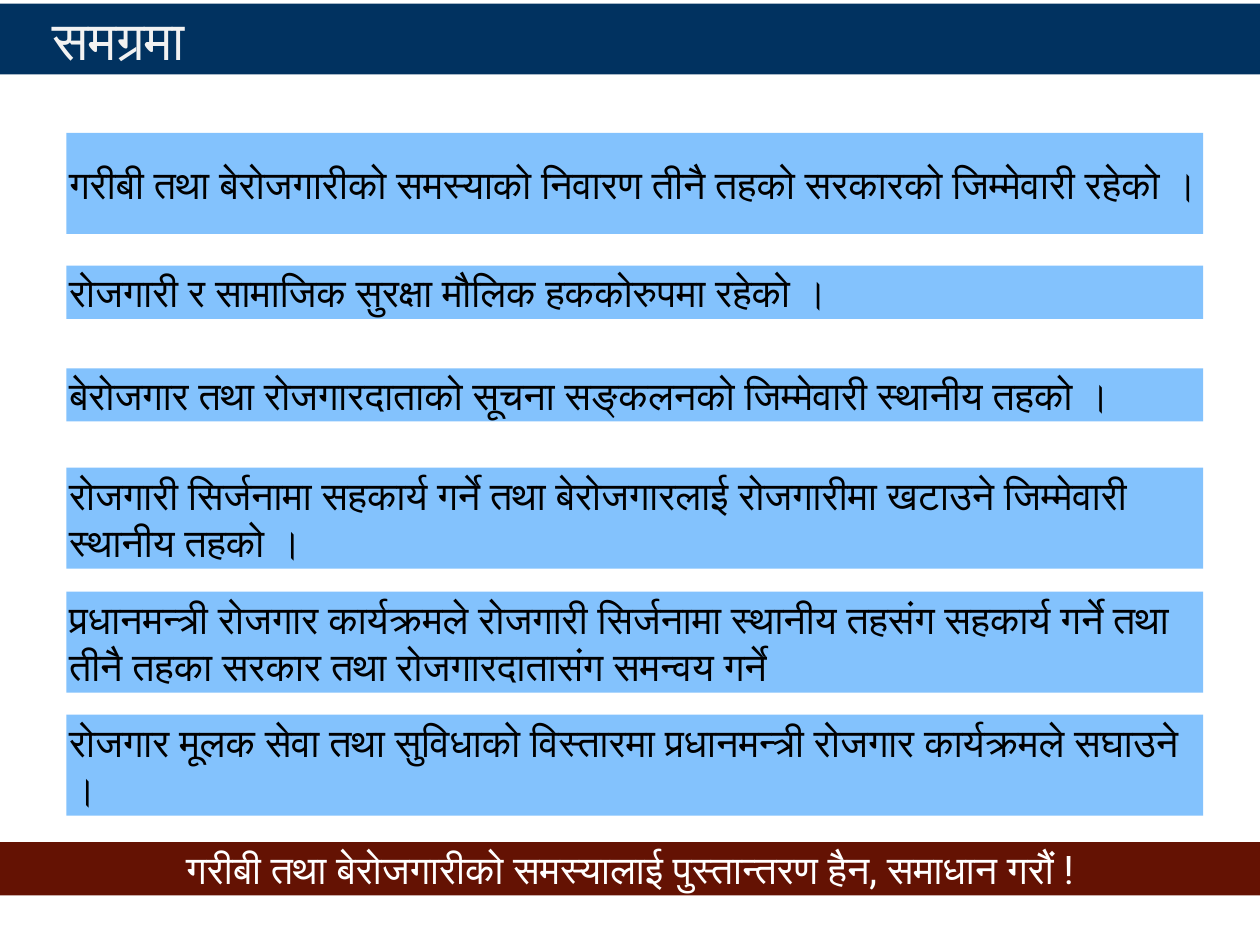
from dataclasses import dataclass

from pptx import Presentation
from pptx.dml.color import RGBColor
from pptx.enum.shapes import MSO_SHAPE as Shape
from pptx.enum.text import MSO_ANCHOR as Anchor, MSO_AUTO_SIZE as AutoSize, PP_ALIGN as Align
from pptx.util import Inches, Pt

# Content: each point has its top edge (inches), height in text lines, and wording
TITLE = "समग्रमा"
POINTS = [
    (1.5, 2, "गरीबी तथा बेरोजगारीको समस्याको निवारण तीनै तहको सरकारको जिम्मेवारी रहेको ।"),
    (3.0, 1, "रोजगारी र सामाजिक सुरक्षा मौलिक हककोरुपमा रहेको ।"),
    (4.16, 1, "बेरोजगार तथा रोजगारदाताको सूचना सङ्कलनको जिम्मेवारी स्थानीय तहको ।"),
    (5.28, 2, "रोजगारी सिर्जनामा सहकार्य गर्ने तथा बेरोजगारलाई रोजगारीमा खटाउने "
              "जिम्मेवारी स्थानीय तहको ।"),
    (6.68, 2, "प्रधानमन्त्री रोजगार कार्यक्रमले रोजगारी सिर्जनामा स्थानीय तहसंग सहकार्य गर्ने "
              "तथा तीनै तहका सरकार तथा रोजगारदातासंग समन्वय गर्ने"),
    (8.07, 2, "रोजगार मूलक सेवा तथा सुविधाको विस्तारमा प्रधानमन्त्री रोजगार कार्यक्रमले सघाउने ।"),
]
SLOGAN = "गरीबी तथा बेरोजगारीको समस्यालाई पुस्तान्तरण हैन, समाधान गरौं !"


@dataclass(frozen=True)
class Theme:
    title_fill: str = "013260"
    title_ink: str = "F2F2F2"
    point_fill: str = "83C2FD"
    point_ink: str = "000000"
    slogan_fill: str = "641203"
    slogan_ink: str = "FFFFFF"
    title_font: str = "Lato"
    body_font: str = "Roboto"
    title_size: int = 44
    body_size: int = 32


THEME = Theme()

# Geometry in inches
SLIDE_W, SLIDE_H = 14.22, 10.67
POINT_LEFT, POINT_W = 0.75, 12.83
INSET, LINE_H = 0.03, 0.54
TITLE_TOP, TITLE_H, TITLE_INDENT = 0.04, 0.8, 0.56
SLOGAN_TOP = 9.51


def lines_height(lines):
    return 2 * INSET + lines * LINE_H


def add_bar(slide, box, wording, fill, ink, font=THEME.body_font, size=THEME.body_size,
            align=Align.LEFT):
    """Add a filled bar with its wording and return the paragraph."""
    bar = slide.shapes.add_shape(Shape.RECTANGLE, *map(Inches, box))
    bar.shadow.inherit = False
    bar.fill.solid()
    bar.fill.fore_color.rgb = RGBColor.from_string(fill)
    bar.line.fill.background()

    frame = bar.text_frame
    frame.word_wrap = True
    frame.auto_size = AutoSize.SHAPE_TO_FIT_TEXT
    frame.vertical_anchor = Anchor.MIDDLE
    frame.margin_left = frame.margin_right = Inches(INSET)
    frame.margin_top = frame.margin_bottom = Inches(INSET)
    frame.text = wording

    paragraph = frame.paragraphs[0]
    paragraph.alignment = align
    style = paragraph.runs[0].font
    style.name, style.size = font, Pt(size)
    style.color.rgb = RGBColor.from_string(ink)
    return paragraph


def main():
    deck = Presentation()
    deck.slide_width, deck.slide_height = Inches(SLIDE_W), Inches(SLIDE_H)
    slide = deck.slides.add_slide(deck.slide_layouts[6])

    # Title bar with a first-line indent
    heading = add_bar(slide, (0, TITLE_TOP, SLIDE_W, TITLE_H), TITLE, THEME.title_fill,
                      THEME.title_ink, THEME.title_font, THEME.title_size)
    heading.space_before = Pt(41)
    indent = heading._p.get_or_add_pPr()
    indent.set("marL", "0")
    indent.set("indent", str(Inches(TITLE_INDENT)))

    # Points
    for top, lines, point in POINTS:
        add_bar(slide, (POINT_LEFT, top, POINT_W, lines_height(lines)), point,
                THEME.point_fill, THEME.point_ink)

    # Closing slogan
    add_bar(slide, (0, SLOGAN_TOP, SLIDE_W, lines_height(1)), SLOGAN,
            THEME.slogan_fill, THEME.slogan_ink, align=Align.CENTER)

    deck.save("out.pptx")


if __name__ == "__main__":
    main()
